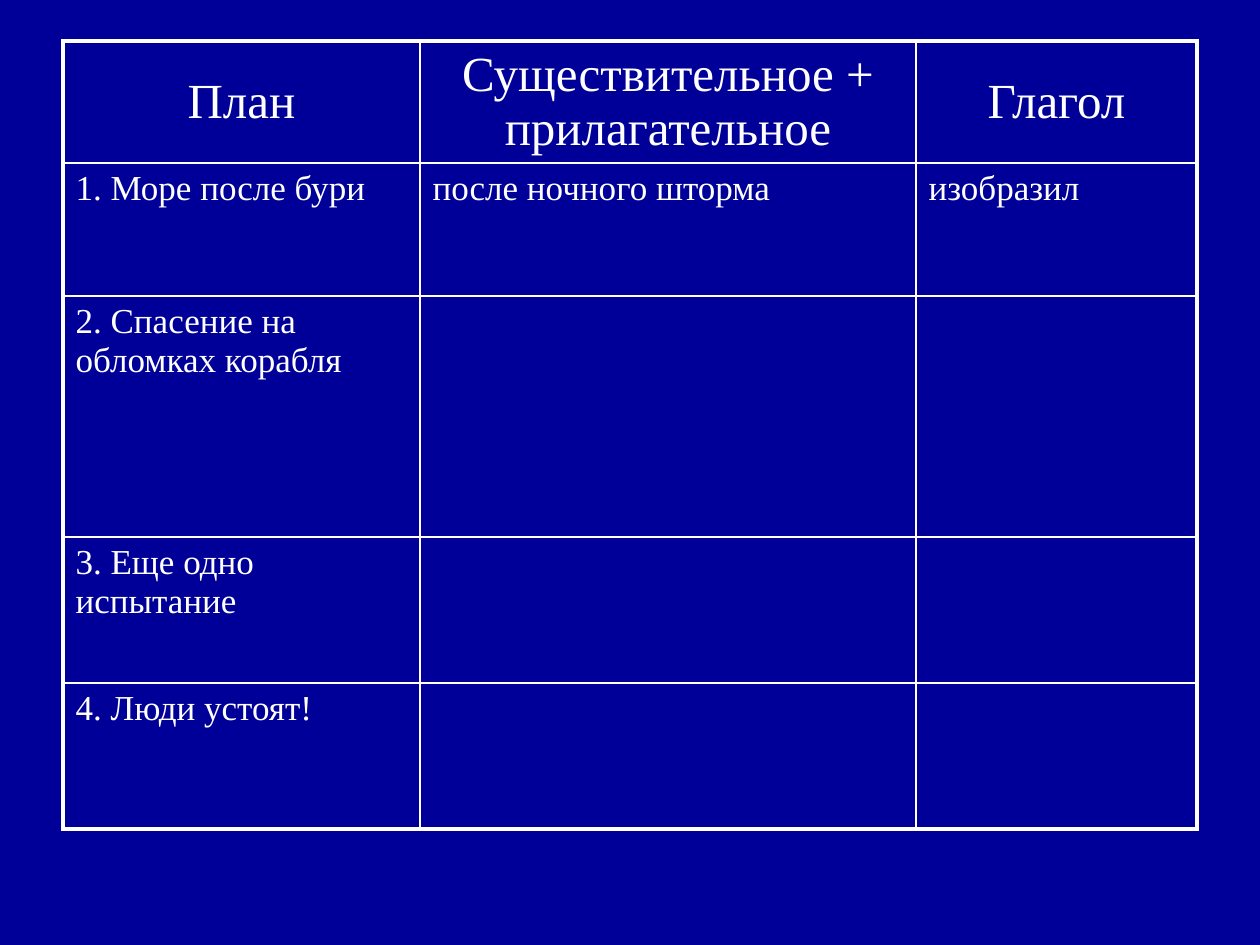
from dataclasses import dataclass

from lxml import etree
from pptx import Presentation
from pptx.dml.color import RGBColor
from pptx.enum.text import MSO_ANCHOR, PP_ALIGN
from pptx.oxml.ns import qn
from pptx.util import Emu, Pt

LEFT, CENTER = PP_ALIGN.LEFT, PP_ALIGN.CENTER
TOP, MIDDLE = MSO_ANCHOR.TOP, MSO_ANCHOR.MIDDLE
BLANK_LAYOUT = 6
EMU_PER_PX = 914400 / 126


@dataclass(frozen=True)
class Theme:
    background: str = "000099"
    foreground: str = "FFFFFF"
    font: str = "Times New Roman"
    header_size: int = 28
    body_size: int = 20
    outer_line: float = 2.25
    inner_line: float = 1


@dataclass(frozen=True)
class Row:
    height: int
    texts: tuple[str, ...]


THEME = Theme()
TABLE_LEFT, TABLE_TOP = 63, 41
COLUMN_WIDTHS = (357, 496, 281)
ROWS = (
    Row(122, ("План", "Существительное + прилагательное", "Глагол")),
    Row(133, ("1. Море после бури", "после ночного шторма", "изобразил")),
    Row(241, ("2. Спасение на обломках корабля", "", "")),
    Row(146, ("3. Еще одно испытание", "", "")),
    Row(146, ("4. Люди устоят!", "", "")),
)


def px(length: int) -> Emu:
    return Emu(round(length * EMU_PER_PX))


def set_borders(cell, outer_sides: dict[str, bool]) -> None:
    """Draw the cell borders, thicker on the table's outer edge."""
    properties = cell._tc.get_or_add_tcPr()
    for index, (side, is_outer) in enumerate(outer_sides.items()):
        width = THEME.outer_line if is_outer else THEME.inner_line
        line = etree.Element(qn(f"a:ln{side}"), w=str(Pt(width)))
        fill = etree.SubElement(line, qn("a:solidFill"))
        etree.SubElement(fill, qn("a:srgbClr"), val=THEME.foreground)
        properties.insert(index, line)


def write_cell(cell, text: str, is_header: bool) -> None:
    cell.fill.background()
    cell.vertical_anchor = MIDDLE if is_header else TOP
    cell.text = text
    paragraph = cell.text_frame.paragraphs[0]
    paragraph.alignment = CENTER if is_header else LEFT
    font = paragraph.font
    font.name = THEME.font
    font.size = Pt(THEME.header_size if is_header else THEME.body_size)
    font.bold = False
    font.color.rgb = RGBColor.from_string(THEME.foreground)


def add_plan_table(slide) -> None:
    last_row, last_column = len(ROWS) - 1, len(COLUMN_WIDTHS) - 1
    table = slide.shapes.add_table(
        len(ROWS), len(COLUMN_WIDTHS), px(TABLE_LEFT), px(TABLE_TOP),
        px(sum(COLUMN_WIDTHS)), px(sum(row.height for row in ROWS)),
    ).table
    table.horz_banding = False
    table.first_row = False
    for column, width in zip(table.columns, COLUMN_WIDTHS):
        column.width = px(width)
    for row_index, row in enumerate(ROWS):
        table.rows[row_index].height = px(row.height)
        for column_index, text in enumerate(row.texts):
            cell = table.cell(row_index, column_index)
            write_cell(cell, text, is_header=row_index == 0)
            set_borders(cell, {
                "L": column_index == 0,
                "R": column_index == last_column,
                "T": row_index == 0,
                "B": row_index == last_row,
            })


def main() -> None:
    presentation = Presentation()
    presentation.slide_width, presentation.slide_height = px(1260), px(945)
    slide = presentation.slides.add_slide(presentation.slide_layouts[BLANK_LAYOUT])

    # Background
    background = slide.background.fill
    background.solid()
    background.fore_color.rgb = RGBColor.from_string(THEME.background)

    # Plan of the essay with word columns
    add_plan_table(slide)
    presentation.save("out.pptx")


if __name__ == "__main__":
    main()
